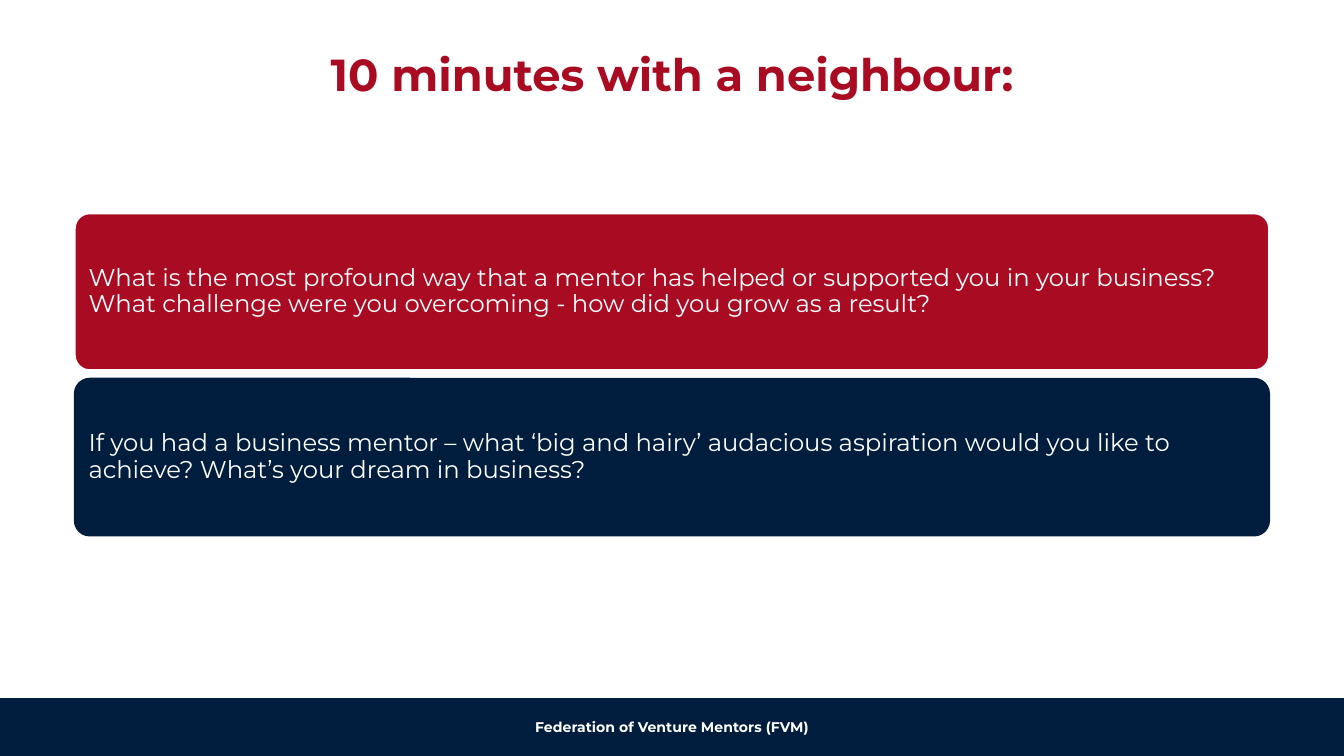
from pptx import Presentation
from pptx.dml.color import RGBColor
from pptx.enum.shapes import MSO_SHAPE
from pptx.enum.text import MSO_ANCHOR, PP_ALIGN
from pptx.util import Pt

RED = RGBColor(0xA9, 0x0B, 0x22)
NAVY = RGBColor(0x00, 0x1D, 0x3D)
WHITE = RGBColor(0xFF, 0xFF, 0xFF)
OFF_WHITE = RGBColor(0xFD, 0xFD, 0xFD)

FONT = "Montserrat"
SLIDE_WIDTH, SLIDE_HEIGHT = 720, 405
CARD_LEFT, CARD_TOP = 39.6, 113.8
CARD_WIDTH, CARD_HEIGHT = 640.8, 85
CARD_PITCH = 88.6
FOOTER_TOP = 374.4

QUESTIONS = [
    ("What is the most profound way that a mentor has helped or supported you "
     "in your business? What challenge were you overcoming - how did you grow "
     "as a result?", RED, WHITE),
    ("If you had a business mentor – what ‘big and hairy’ audacious aspiration "
     "would you like to achieve? What’s your dream in business?", NAVY, None),
]


def write_text(holder, text, size, color, bold=False, align=PP_ALIGN.CENTER,
               anchor=MSO_ANCHOR.MIDDLE, margin=3.6, spacing=None):
    frame = holder.text_frame
    frame.word_wrap = True
    frame.vertical_anchor = anchor
    frame.margin_left = frame.margin_right = Pt(margin)
    frame.margin_top = frame.margin_bottom = Pt(margin / 2)
    paragraph = frame.paragraphs[0]
    paragraph.alignment = align
    paragraph.line_spacing = spacing
    run = paragraph.add_run()
    run.text = text
    run.font.name = FONT
    run.font.size = Pt(size)
    run.font.bold = bold
    run.font.color.rgb = color


def add_panel(slide, kind, left, top, width, height, fill, outline, weight):
    panel = slide.shapes.add_shape(kind, Pt(left), Pt(top), Pt(width), Pt(height))
    panel.shadow.inherit = False
    panel.fill.solid()
    panel.fill.fore_color.rgb = fill
    if outline is None:
        panel.line.fill.background()
    else:
        panel.line.color.rgb = outline
        panel.line.width = Pt(weight)
    return panel


def add_title(slide, text):
    title = slide.shapes.add_textbox(Pt(12.2), Pt(26.6), Pt(695.6), Pt(58.3))
    write_text(title, text, 24, RED, bold=True, anchor=MSO_ANCHOR.TOP, spacing=0.9)


def add_question(slide, row, text, fill, outline):
    card = add_panel(slide, MSO_SHAPE.ROUNDED_RECTANGLE, CARD_LEFT,
                     CARD_TOP + row * CARD_PITCH, CARD_WIDTH, CARD_HEIGHT,
                     fill, outline, 2)
    card.adjustments[0] = 0.1
    write_text(card, text, 13, OFF_WHITE, align=PP_ALIGN.LEFT, margin=5.4,
               spacing=0.9)


def add_footer(slide, text):
    footer = add_panel(slide, MSO_SHAPE.RECTANGLE, 0, FOOTER_TOP, SLIDE_WIDTH,
                       SLIDE_HEIGHT - FOOTER_TOP, NAVY, NAVY, 0.75)
    write_text(footer, text, 7.5, WHITE, bold=True)


def main():
    deck = Presentation()
    deck.slide_width, deck.slide_height = Pt(SLIDE_WIDTH), Pt(SLIDE_HEIGHT)
    slide = deck.slides.add_slide(deck.slide_layouts[6])
    add_title(slide, "10 minutes with a neighbour:")
    for row, (text, fill, outline) in enumerate(QUESTIONS):
        add_question(slide, row, text, fill, outline)
    add_footer(slide, "Federation of Venture Mentors (FVM)")
    deck.save("out.pptx")


if __name__ == "__main__":
    main()
